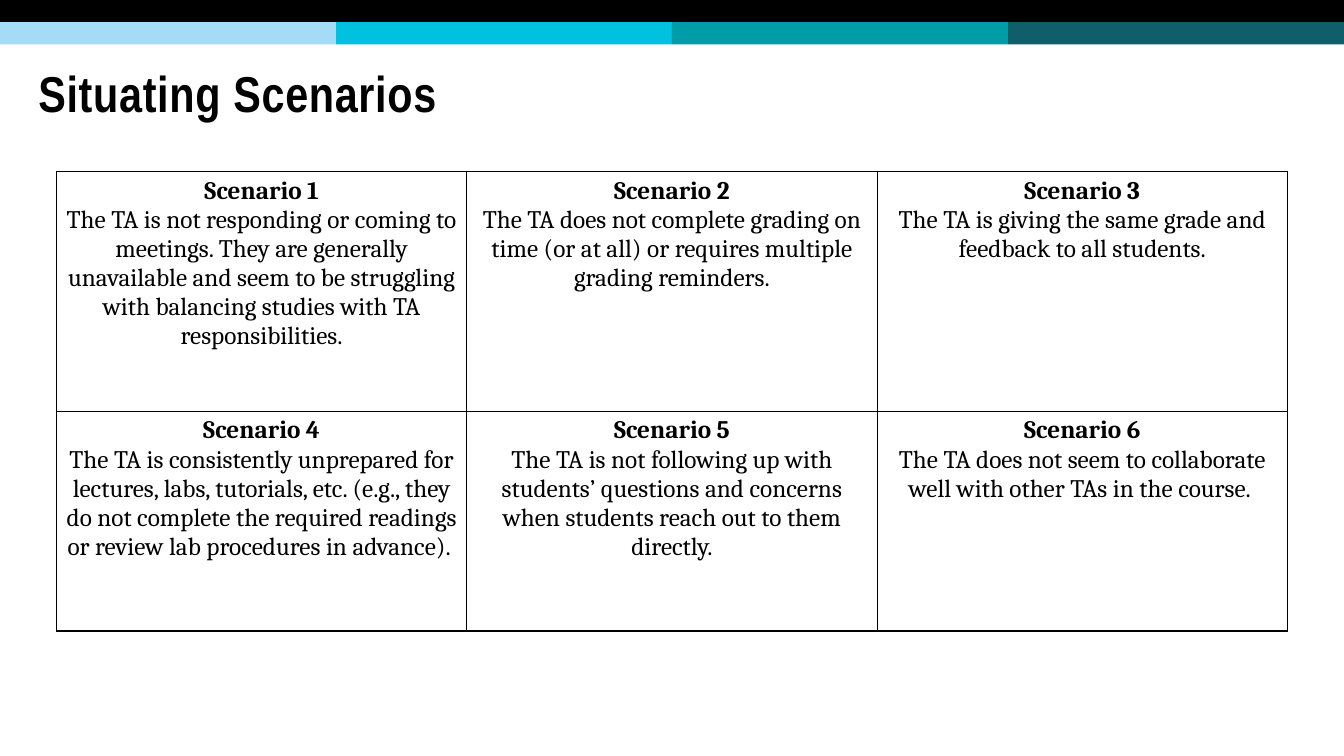
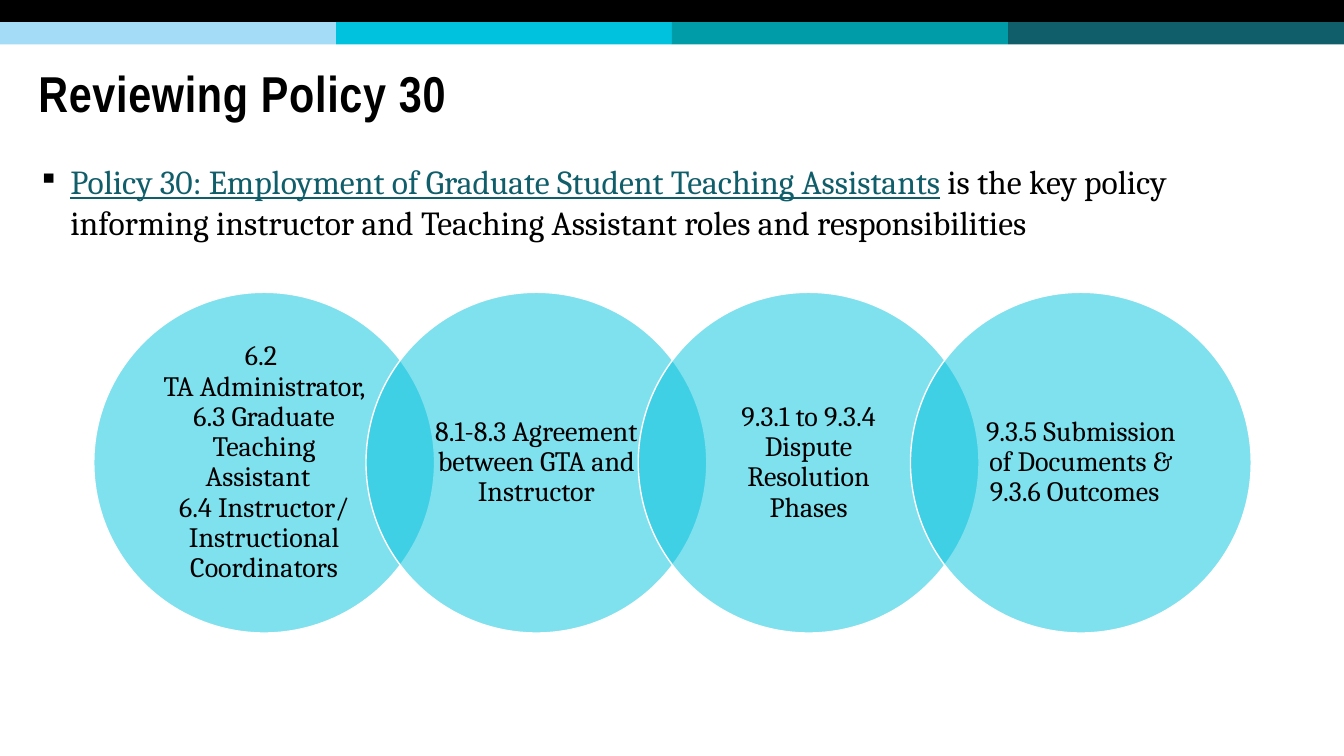
from lxml import etree
from pptx import Presentation
from pptx.dml.color import RGBColor
from pptx.enum.shapes import MSO_SHAPE
from pptx.enum.text import MSO_ANCHOR, MSO_AUTO_SIZE, PP_ALIGN
from pptx.oxml.ns import qn
from pptx.util import Inches, Pt

RECTANGLE = MSO_SHAPE.RECTANGLE
OVAL = MSO_SHAPE.OVAL
LEFT = PP_ALIGN.LEFT
CENTER = PP_ALIGN.CENTER
MIDDLE = MSO_ANCHOR.MIDDLE
NO_AUTOFIT = MSO_AUTO_SIZE.NONE

BLACK = RGBColor(0x00, 0x00, 0x00)
WHITE = RGBColor(0xFF, 0xFF, 0xFF)
SKY = RGBColor(0xA4, 0xDB, 0xF7)
CYAN = RGBColor(0x00, 0xC2, 0xDE)
TEAL = RGBColor(0x00, 0x9C, 0xA8)
DARK_TEAL = RGBColor(0x11, 0x5E, 0x6B)

TITLE_FONT = "Arial Narrow"
BODY_FONT = "Cambria"
SLIDE_WIDTH = 13.33
SLIDE_HEIGHT = 7.5
BAND_HEIGHT = 0.22
BAND_COLORS = (SKY, CYAN, TEAL, DARK_TEAL)

SCENARIOS = (
    (
        "The TA is not responding or coming to meetings. They are generally unavailable "
        "and seem to be struggling with balancing studies with TA responsibilities.",
        "The TA does not complete grading on time (or at all) or requires multiple "
        "grading reminders.",
        "The TA is giving the same grade and feedback to all students.",
    ),
    (
        "The TA is consistently unprepared for lectures, labs, tutorials, etc. (e.g., they "
        "do not complete the required readings or review lab procedures in advance). ",
        "The TA is not following up with students’ questions and concerns when students "
        "reach out to them directly.",
        "The TA does not seem to collaborate well with other TAs in the course. ",
    ),
)
ROW_HEIGHTS = (2.38, 2.18)
COLUMN_WIDTH = 4.07

POLICY_NAME = "Policy 30: Employment of Graduate Student Teaching Assistants"
POLICY_ROLE = (
    " is the key policy informing instructor and Teaching Assistant roles and responsibilities"
)
POLICY_SECTIONS = (
    "6.2 \vTA Administrator, 6.3 Graduate Teaching Assistant  \v"
    "6.4 Instructor/\vInstructional Coordinators",
    "8.1-8.3 Agreement between GTA and Instructor",
    "9.3.1 to 9.3.4 Dispute Resolution Phases",
    "9.3.5 Submission of Documents & 9.3.6 Outcomes  ",
)
CIRCLE_LEFT = 0.93
CIRCLE_TOP = 2.9
CIRCLE_SIZE = 3.38
CIRCLE_PITCH = 2.7


def style_runs(paragraph, name, size, color=BLACK, bold=False):
    """Give every run of a paragraph the same font."""
    for run in paragraph.runs:
        run.font.name = name
        run.font.size = Pt(size)
        run.font.color.rgb = color
        run.font.bold = bold


def add_filled_shape(slide, kind, left, top, width, height, color):
    """Add a plain filled shape without outline or shadow."""
    shape = slide.shapes.add_shape(
        kind, Inches(left), Inches(top), Inches(width), Inches(height)
    )
    shape.shadow.inherit = False
    shape.fill.solid()
    shape.fill.fore_color.rgb = color
    shape.line.fill.background()
    return shape


def add_layout_bands(slide):
    """Draw the top bands and hand them to the layout that all slides share."""
    width = SLIDE_WIDTH / len(BAND_COLORS)
    bands = [add_filled_shape(slide, RECTANGLE, 0, 0, SLIDE_WIDTH, BAND_HEIGHT, BLACK)]
    for index, color in enumerate(BAND_COLORS):
        bands.append(
            add_filled_shape(
                slide, RECTANGLE, index * width, BAND_HEIGHT, width, BAND_HEIGHT, color
            )
        )
    for band in bands:
        slide.slide_layout.shapes._spTree.append(band._element)


def add_titled_slide(presentation, text):
    """Add a title-only slide and format its title."""
    slide = presentation.slides.add_slide(presentation.slide_layouts[5])
    title = slide.shapes.title
    title.left, title.top = Inches(0.28), Inches(0.47)
    title.width, title.height = Inches(12.65), Inches(0.98)
    frame = title.text_frame
    frame.text = text
    frame.auto_size = NO_AUTOFIT
    frame.vertical_anchor = MIDDLE
    paragraph = frame.paragraphs[0]
    paragraph.alignment = LEFT
    paragraph.line_spacing = 0.85
    style_runs(paragraph, TITLE_FONT, 36, bold=True)
    paragraph.runs[0].font._element.set("spc", "50")
    return slide


def set_cell_borders(cell):
    """Draw a thin black line on every side of a cell."""
    properties = cell._tc.get_or_add_tcPr()
    for side in ("a:lnL", "a:lnR", "a:lnT", "a:lnB"):
        line = etree.SubElement(properties, qn(side), w=str(Pt(1)))
        fill = etree.SubElement(line, qn("a:solidFill"))
        etree.SubElement(fill, qn("a:srgbClr"), val=str(BLACK))


def fill_scenario_cell(cell, heading, description):
    """Write a bold heading and its description into a bordered cell."""
    set_cell_borders(cell)
    cell.fill.background()
    frame = cell.text_frame
    frame.text = f"{heading}\n{description}"
    for index, paragraph in enumerate(frame.paragraphs):
        paragraph.alignment = CENTER
        style_runs(paragraph, BODY_FONT, 18, bold=index == 0)


def add_scenario_table(slide):
    """Add the grid of numbered scenarios."""
    column_count = len(SCENARIOS[0])
    table = slide.shapes.add_table(
        len(SCENARIOS), column_count, Inches(0.56), Inches(1.7),
        Inches(column_count * COLUMN_WIDTH), Inches(sum(ROW_HEIGHTS)),
    ).table
    table.first_row = False
    table.horz_banding = False
    for column in table.columns:
        column.width = Inches(COLUMN_WIDTH)
    for row_index, descriptions in enumerate(SCENARIOS):
        table.rows[row_index].height = Inches(ROW_HEIGHTS[row_index])
        for column_index, description in enumerate(descriptions):
            number = row_index * column_count + column_index + 1
            fill_scenario_cell(
                table.cell(row_index, column_index), f"Scenario {number}", description
            )


def add_square_bullet(paragraph):
    """Give a paragraph a hanging black square bullet."""
    properties = paragraph._p.get_or_add_pPr()
    properties.set("marL", str(Inches(0.32)))
    properties.set("indent", str(-Inches(0.32)))
    color = etree.SubElement(properties, qn("a:buClr"))
    etree.SubElement(color, qn("a:srgbClr"), val=str(BLACK))
    etree.SubElement(properties, qn("a:buSzPct"), val="85000")
    etree.SubElement(properties, qn("a:buChar"), char="▪")


def add_policy_statement(slide):
    """Add the bulleted sentence with the underlined policy name."""
    box = slide.shapes.add_textbox(Inches(0.28), Inches(1.55), Inches(12.23), Inches(1))
    box.text_frame.word_wrap = True
    paragraph = box.text_frame.paragraphs[0]
    add_square_bullet(paragraph)
    for text in (POLICY_NAME, POLICY_ROLE):
        paragraph.add_run().text = text
    style_runs(paragraph, BODY_FONT, 24)
    name_font = paragraph.runs[0].font
    name_font.color.rgb = DARK_TEAL
    name_font.underline = True


def add_section_circle(slide, left, text):
    """Add a half-transparent circle holding policy sections."""
    circle = add_filled_shape(
        slide, OVAL, left, CIRCLE_TOP, CIRCLE_SIZE, CIRCLE_SIZE, CYAN
    )
    color = circle._element.spPr.find(qn("a:solidFill")).find(qn("a:srgbClr"))
    etree.SubElement(color, qn("a:alpha"), val="50000")
    circle.line.color.rgb = WHITE
    circle.line.width = Pt(1)
    frame = circle.text_frame
    frame.word_wrap = True
    frame.vertical_anchor = MIDDLE
    frame.margin_left = frame.margin_right = Inches(0.18)
    frame.margin_top = frame.margin_bottom = Inches(0.03)
    paragraph = frame.paragraphs[0]
    paragraph.text = text
    paragraph.alignment = CENTER
    paragraph.line_spacing = 0.9
    style_runs(paragraph, BODY_FONT, 20)


def main():
    """Build and save the presentation."""
    presentation = Presentation()
    presentation.slide_width = Inches(SLIDE_WIDTH)
    presentation.slide_height = Inches(SLIDE_HEIGHT)

    scenario_slide = add_titled_slide(presentation, "Situating Scenarios")
    add_layout_bands(scenario_slide)
    add_scenario_table(scenario_slide)

    policy_slide = add_titled_slide(presentation, "Reviewing Policy 30")
    add_policy_statement(policy_slide)
    for index, text in enumerate(POLICY_SECTIONS):
        add_section_circle(policy_slide, CIRCLE_LEFT + index * CIRCLE_PITCH, text)

    presentation.save("out.pptx")


if __name__ == "__main__":
    main()
